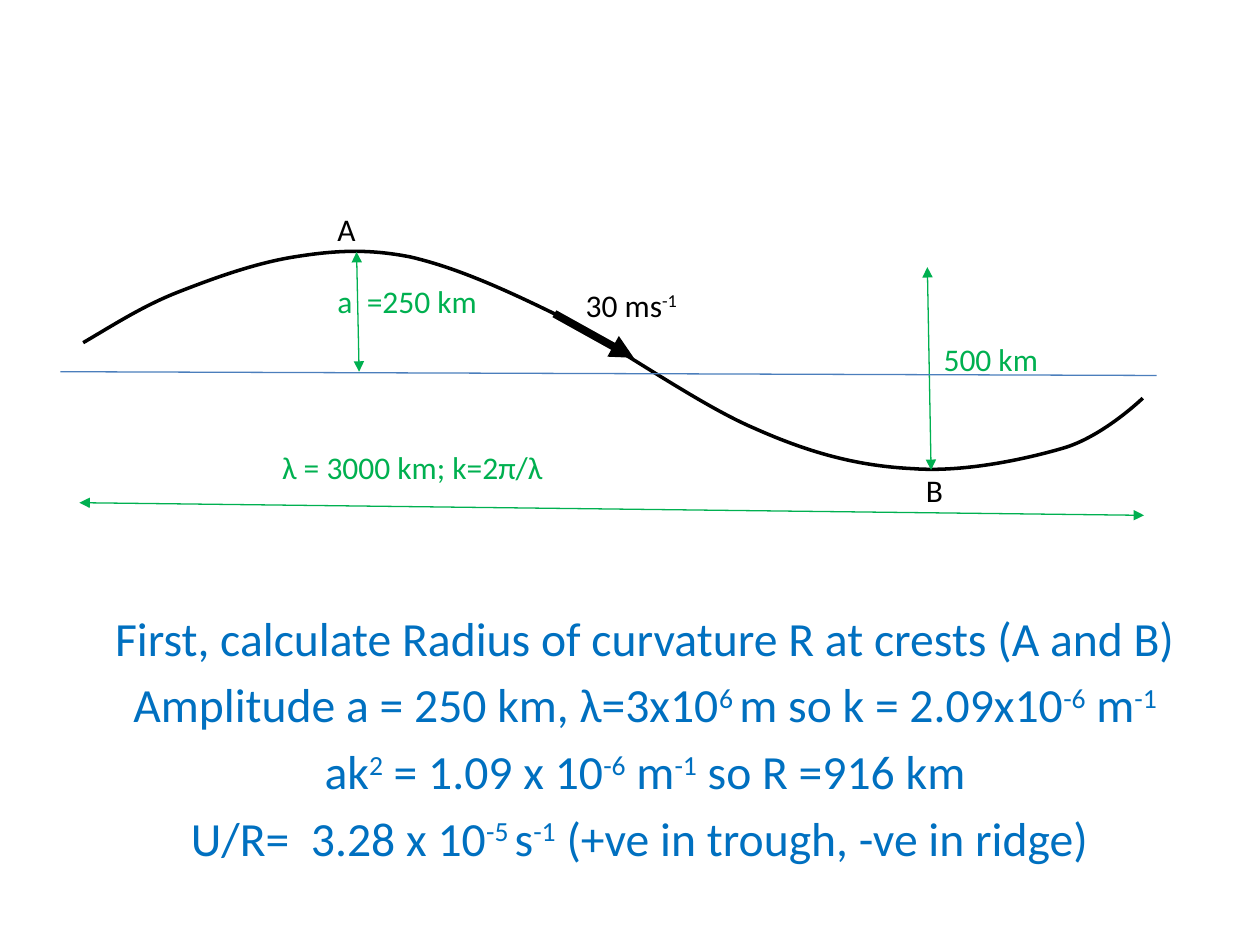
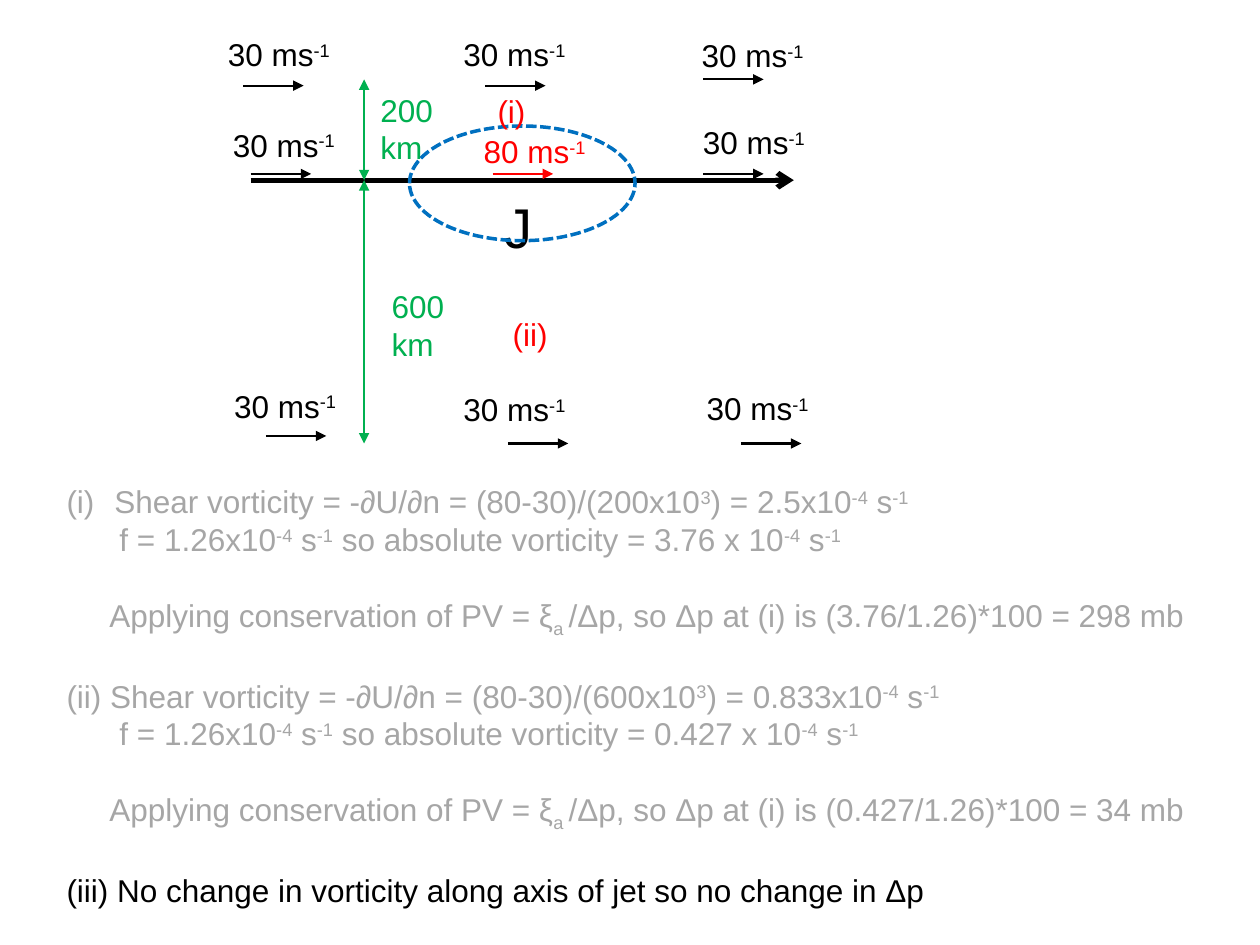
from dataclasses import dataclass

from lxml import etree
from pptx import Presentation
from pptx.dml.color import RGBColor
from pptx.enum.dml import MSO_LINE
from pptx.enum.shapes import MSO_CONNECTOR, MSO_SHAPE
from pptx.enum.text import MSO_AUTO_SIZE, PP_ALIGN
from pptx.oxml.ns import qn
from pptx.util import Inches, Pt

STRAIGHT = MSO_CONNECTOR.STRAIGHT
ELLIPSE = MSO_SHAPE.OVAL
DASHED = MSO_LINE.SQUARE_DOT
GROW = MSO_AUTO_SIZE.SHAPE_TO_FIT_TEXT
CENTER = PP_ALIGN.CENTER
BASELINES = {"^": "30000", "_": "-25000"}


@dataclass(frozen=True)
class Theme:
    ink: str = "000000"
    measure: str = "00B050"
    accent: str = "0070C0"
    axis: str = "4B7EBC"
    alert: str = "FF0000"
    muted: str = "A6A6A6"
    wave_font: str = "Calibri"
    jet_font: str = "Arial"
    label: float = 18
    body: float = 27.2
    jet_mark: float = 32


THEME = Theme()


# Text: {^..} marks superscript and {_..} marks subscript
def add_run(paragraph, text, font, size, color, baseline=None):
    run = paragraph.add_run()
    run.text = text
    run.font.name = font
    run.font.size = Pt(size)
    run.font.color.rgb = RGBColor.from_string(color)
    if baseline:
        run.font._element.set("baseline", baseline)


def write(paragraph, text, font, size, color):
    for chunk in text.split("{"):
        script, closed, plain = chunk.rpartition("}")
        if closed:
            add_run(paragraph, script[1:], font, size, color, BASELINES[script[0]])
        if plain:
            add_run(paragraph, plain, font, size, color)


def add_frame(shapes, left, top, width, height):
    box = shapes.add_textbox(Inches(left), Inches(top), Inches(width), Inches(height))
    frame = box.text_frame
    frame.word_wrap = True
    frame.auto_size = GROW
    return frame


def add_label(shapes, text, left, top, width, font, color=THEME.ink,
              size=THEME.label, height=0.4):
    frame = add_frame(shapes, left, top, width, height)
    write(frame.paragraphs[0], text, font, size, color)


# Lines
def add_line(shapes, start, end, color, width, head=None, tail=None):
    x1, y1, x2, y2 = (Inches(v) for v in (*start, *end))
    line = shapes.add_connector(STRAIGHT, x1, y1, x2, y2)
    line.line.color.rgb = RGBColor.from_string(color)
    line.line.width = Pt(width)
    for tag, kind in (("a:headEnd", head), ("a:tailEnd", tail)):
        if kind:
            etree.SubElement(line.line._get_or_add_ln(), qn(tag), type=kind)
    etree.SubElement(line._element.spPr, qn("a:effectLst"))


def add_measure(shapes, start, end, width):
    add_line(shapes, start, end, THEME.measure, width, "triangle", "triangle")


def add_wind(shapes, x, y, color=THEME.ink):
    add_line(shapes, (x, y), (x + 0.48, y), color, 1.25, tail="triangle")


def add_curve(shapes, start, points, color, width):
    builder = shapes.build_freeform(Inches(start[0]), Inches(start[1]))
    builder.add_line_segments([(Inches(x), Inches(y)) for x, y in points], close=False)
    curve = builder.convert_to_shape()
    # Every three straight segments become one cubic Bezier segment
    segments = list(curve._element.iter(qn("a:lnTo")))
    for first, second, third in zip(*[iter(segments)] * 3):
        first.tag = qn("a:cubicBezTo")
        for segment in (second, third):
            first.append(segment[0])
            segment.getparent().remove(segment)
    curve.shadow.inherit = False
    curve.fill.background()
    curve.line.color.rgb = RGBColor.from_string(color)
    curve.line.width = Pt(width)


# Slide 1: radius of curvature of the wave
def build_wave(slide):
    shapes = slide.shapes
    steps = (
        "First, calculate Radius of curvature R at crests (A and B)",
        "Amplitude a = 250 km, λ=3x10{^6 }m so k = 2.09x10{^-6} m{^-1}",
        "ak{^2} = 1.09 x 10{^-6} m{^-1} so R =916 km",
        "U/R=  3.28 x 10{^-5 }s{^-1} (+ve in trough, -ve in ridge) ",
    )
    frame = add_frame(shapes, 0.62, 1.7, 9, 4.95)
    frame.margin_top = Inches(3.13)
    for i, step in enumerate(steps):
        paragraph = frame.add_paragraph() if i else frame.paragraphs[0]
        paragraph.alignment = CENTER
        paragraph.space_before = Pt(5.4 if i else 0)
        write(paragraph, step, THEME.wave_font, THEME.body, THEME.accent)

    # Two control points and an end point per row
    wave = (
        (0.9, 2.58), (1.13, 2.43), (1.41, 2.32),
        (1.69, 2.21), (2.02, 2.09), (2.33, 2.04),
        (2.64, 1.99), (2.91, 1.97), (3.26, 2.04),
        (3.6, 2.12), (3.95, 2.27), (4.4, 2.49),
        (4.86, 2.72), (5.52, 3.2), (5.99, 3.4),
        (6.46, 3.61), (6.84, 3.7), (7.25, 3.72),
        (7.66, 3.75), (8.16, 3.64), (8.46, 3.55),
        (8.77, 3.45), (9.07, 3.16), (9.07, 3.16),
    )
    add_curve(shapes, (0.66, 2.72), wave, THEME.ink, 2)
    add_line(shapes, (4.4, 2.49), (5.03, 2.84), THEME.ink, 4.5, tail="triangle")

    # Height, wavelength and amplitude
    for start, end in (((7.36, 2.12), (7.39, 3.73)),
                       ((0.63, 3.99), (9.08, 4.09)),
                       ((2.83, 2), (2.85, 2.95))):
        add_measure(shapes, start, end, 0.75)
    add_line(shapes, (0.48, 2.95), (9.18, 2.98), THEME.axis, 0.75)

    for text, left, top, width, color in (
            ("30 ms{^-1}", 4.55, 2.22, 1.26, THEME.ink),
            ("500 km", 7.39, 2.65, 1.85, THEME.measure),
            ("λ = 3000 km; k=2π/λ", 2.14, 3.51, 2.32, THEME.measure),
            ("a  =250 km", 2.58, 2.19, 1.85, THEME.measure),
            ("A", 2.58, 1.62, 0.47, THEME.ink),
            ("B", 7.25, 3.69, 0.47, THEME.ink)):
        add_label(shapes, text, left, top, width, THEME.wave_font, color)


# Slide 2: shear vorticity beside the jet
def build_jet_diagram(slide):
    shapes = slide.shapes.add_group_shape().shapes
    font = THEME.jet_font
    add_line(shapes, (1.99, 1.43), (6.3, 1.43), THEME.ink, 3, tail="arrow")

    for x, y in ((1.99, 1.38), (5.88, 3.52), (4.03, 3.52), (2.11, 3.46),
                 (5.58, 0.63), (3.85, 0.68), (1.93, 0.68), (5.58, 1.38)):
        add_wind(shapes, x, y)
    add_wind(shapes, 3.91, 1.38, THEME.alert)

    for left, top in ((1.71, 0.23), (5.51, 3.04), (3.58, 3.05), (1.76, 3.02),
                      (5.48, 0.93), (1.75, 0.95), (5.47, 0.24), (3.58, 0.23)):
        add_label(shapes, "30 ms{^-1}", left, top, 1.14, font, height=0.27)
    add_label(shapes, "80 ms{^-1}", 3.74, 1, 1.14, font, THEME.alert, height=0.27)
    add_label(shapes, "J", 3.91, 1.48, 0.54, font, size=THEME.jet_mark, height=0.44)

    # Distances either side of the jet axis
    for top, bottom in ((0.63, 1.43), (1.43, 3.52)):
        add_measure(shapes, (2.89, top), (2.89, bottom), 1.5)
    add_label(shapes, "200 km", 2.92, 0.67, 0.9, font, THEME.measure, height=0.27)
    add_label(shapes, "600 km", 3.01, 2.23, 0.9, font, THEME.measure, height=0.27)

    jet_core = shapes.add_shape(ELLIPSE, Inches(3.25), Inches(1), Inches(1.79), Inches(0.91))
    jet_core.shadow.inherit = False
    jet_core.fill.background()
    jet_core.line.color.rgb = RGBColor.from_string(THEME.accent)
    jet_core.line.width = Pt(2)
    jet_core.line.dash_style = DASHED

    add_label(shapes, "(i)", 3.85, 0.68, 0.52, font, THEME.alert)
    add_label(shapes, "(ii)", 3.97, 2.45, 0.66, font, THEME.alert, height=0.27)


def set_indent(paragraph, left, first=0.0):
    properties = paragraph._p.get_or_add_pPr()
    properties.set("marL", str(Inches(left)))
    properties.set("indent", str(Inches(first)))
    return properties


def build_jet_working(slide):
    absolute = "f = 1.26x10{^-4} s{^-1} so absolute vorticity = %s x 10{^-4} s{^-1}"
    conserved = "Applying conservation of PV = ξ{_a }/Δp, so Δp at (i) is (%s/1.26)*100 = %s mb"
    shear = "Shear vorticity = -∂U/∂n = (80-30)/(%sx10{^3}) = %sx10{^-4} s{^-1}"
    # Text, left indent, gap above, colour
    lines = (
        (shear % ("200", "2.5"), 0.38, False, THEME.muted),
        (absolute % "3.76", 0.42, False, THEME.muted),
        (conserved % ("3.76", "298"), 0.34, True, THEME.muted),
        ("(ii) " + shear % ("600", "0.833"), 0, True, THEME.muted),
        (absolute % "0.427", 0.42, False, THEME.muted),
        (conserved % ("0.427", "34"), 0.34, True, THEME.muted),
        ("(iii) No change in vorticity along axis of jet so no change in Δp",
         0, True, THEME.ink),
    )
    frame = add_frame(slide.shapes, 0.43, 3.78, 9.93, 4.04)
    for i, (text, indent, gap, color) in enumerate(lines):
        paragraph = frame.add_paragraph() if i else frame.paragraphs[0]
        paragraph.space_before = Pt(21.6 if gap else 0)
        properties = set_indent(paragraph, indent, 0 if i else -indent)
        if i == 0:
            etree.SubElement(properties, qn("a:buAutoNum"), type="romanLcParenBoth")
        write(paragraph, text, THEME.jet_font, THEME.label, color)


def main():
    deck = Presentation()
    deck.slide_width, deck.slide_height = Inches(10), Inches(7.5)
    blank = deck.slide_layouts[6]
    build_wave(deck.slides.add_slide(blank))
    jet = deck.slides.add_slide(blank)
    build_jet_diagram(jet)
    build_jet_working(jet)
    deck.save("out.pptx")


if __name__ == "__main__":
    main()
